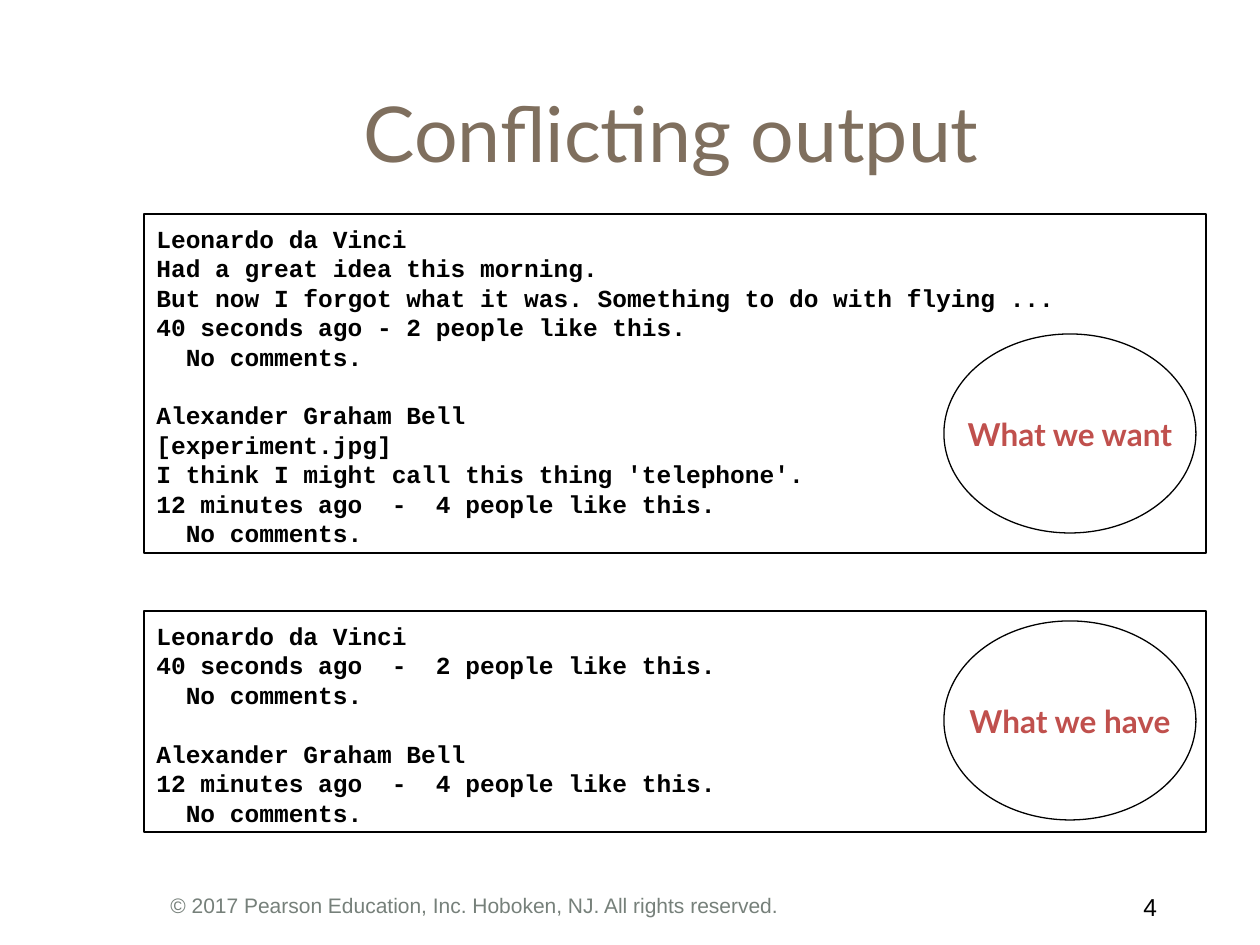
from pptx import Presentation
from pptx import util as u
from pptx.dml.color import RGBColor
from pptx.enum import shapes, text

PX = 914400 // 126
COLORS = {"title": "7F6F5E", "ink": "000000", "footer": "76807A", "label": "C0504D"}

TITLE = "Conflicting output"
COPYRIGHT = "© 2017 Pearson Education, Inc. Hoboken, NJ. All rights reserved."
PAGE_NUMBER = "4"
# Each panel: top, height, label, label top, posts (each a list of lines)
PANELS = [
    (214, 339, "What we want", 334, [
        ["Leonardo da Vinci",
         "Had a great idea this morning.",
         "But now I forgot what it was. Something to do with flying ...",
         "40 seconds ago - 2 people like this.",
         "  No comments."],
        ["Alexander Graham Bell",
         "[experiment.jpg]",
         "I think I might call this thing 'telephone'.",
         "12 minutes ago  -  4 people like this.",
         "  No comments."],
    ]),
    (611, 221, "What we have", 621, [
        ["Leonardo da Vinci",
         "40 seconds ago  -  2 people like this.",
         "  No comments."],
        ["Alexander Graham Bell",
         "12 minutes ago  -  4 people like this.",
         "  No comments."],
    ]),
]
PANEL_LEFT, PANEL_WIDTH = 144, 1062
LABEL_WIDTH, LABEL_HEIGHT, LABEL_GAP = 252, 199, 10
CODE_LINE = u.Pt(16.8)


def write(shape, lines, size, color, font="Arial", bold=False, wrap=True,
          align=text.PP_ALIGN.LEFT, anchor=text.MSO_ANCHOR.TOP,
          spacing=None, gaps=()):
    """Fill a shape with lines; gaps holds the line numbers that follow one line of space."""
    frame = shape.text_frame
    frame.word_wrap = wrap
    frame.vertical_anchor = anchor
    for number, line in enumerate(lines):
        paragraph = frame.add_paragraph() if number else frame.paragraphs[0]
        paragraph.text = line
        paragraph.alignment = align
        if spacing:
            paragraph.line_spacing = spacing
        if number in gaps:
            paragraph.space_before = spacing
        paragraph.font.name = font
        paragraph.font.size = u.Pt(size)
        paragraph.font.bold = bold
        paragraph.font.color.rgb = RGBColor.from_string(COLORS[color])
    return frame


def add_outline(slide, kind, *box):
    shape = slide.shapes.add_shape(kind, *(v * PX for v in box))
    shape.shadow.inherit = False
    shape.fill.background()
    shape.line.color.rgb = RGBColor.from_string(COLORS["ink"])
    shape.line.width = u.Pt(0.75)
    return shape


def add_panel(slide, top, height, posts):
    panel = add_outline(slide, shapes.MSO_SHAPE.RECTANGLE,
                        PANEL_LEFT, top, PANEL_WIDTH, height)
    lines = [line for post in posts for line in post]
    frame = write(panel, lines, 14, "ink", font="Courier New", bold=True,
                  spacing=CODE_LINE, gaps=[len(posts[0])])
    frame.margin_top = 10 * PX


def add_label(slide, label, top):
    left = PANEL_LEFT + PANEL_WIDTH - LABEL_GAP - LABEL_WIDTH
    ellipse = add_outline(slide, shapes.MSO_SHAPE.OVAL,
                          left, top, LABEL_WIDTH, LABEL_HEIGHT)
    write(ellipse, [label], 18, "label", font="Lato", bold=True, wrap=False,
          align=text.PP_ALIGN.CENTER, anchor=text.MSO_ANCHOR.MIDDLE)


def main():
    deck = Presentation()
    deck.slide_width, deck.slide_height = u.Inches(10), u.Inches(7.5)
    slide = deck.slides.add_slide(deck.slide_layouts[5])

    title = slide.shapes.title
    title.left, title.top, title.width, title.height = (
        v * PX for v in (136, 53, 1071, 158))
    write(title, [TITLE], 44, "title", font="Lato",
          align=text.PP_ALIGN.CENTER, anchor=text.MSO_ANCHOR.MIDDLE)

    for top, height, label, label_top, posts in PANELS:
        add_panel(slide, top, height, posts)
        add_label(slide, label, label_top)

    footer = slide.shapes.add_textbox(*(v * PX for v in (158, 886, 955, 42)))
    write(footer, [COPYRIGHT], 12, "footer")
    page = slide.shapes.add_textbox(*(v * PX for v in (1103, 886, 73, 42)))
    frame = write(page, [PAGE_NUMBER], 14, "ink", align=text.PP_ALIGN.RIGHT)
    frame.margin_right = 19 * PX

    deck.save("out.pptx")


if __name__ == "__main__":
    main()
